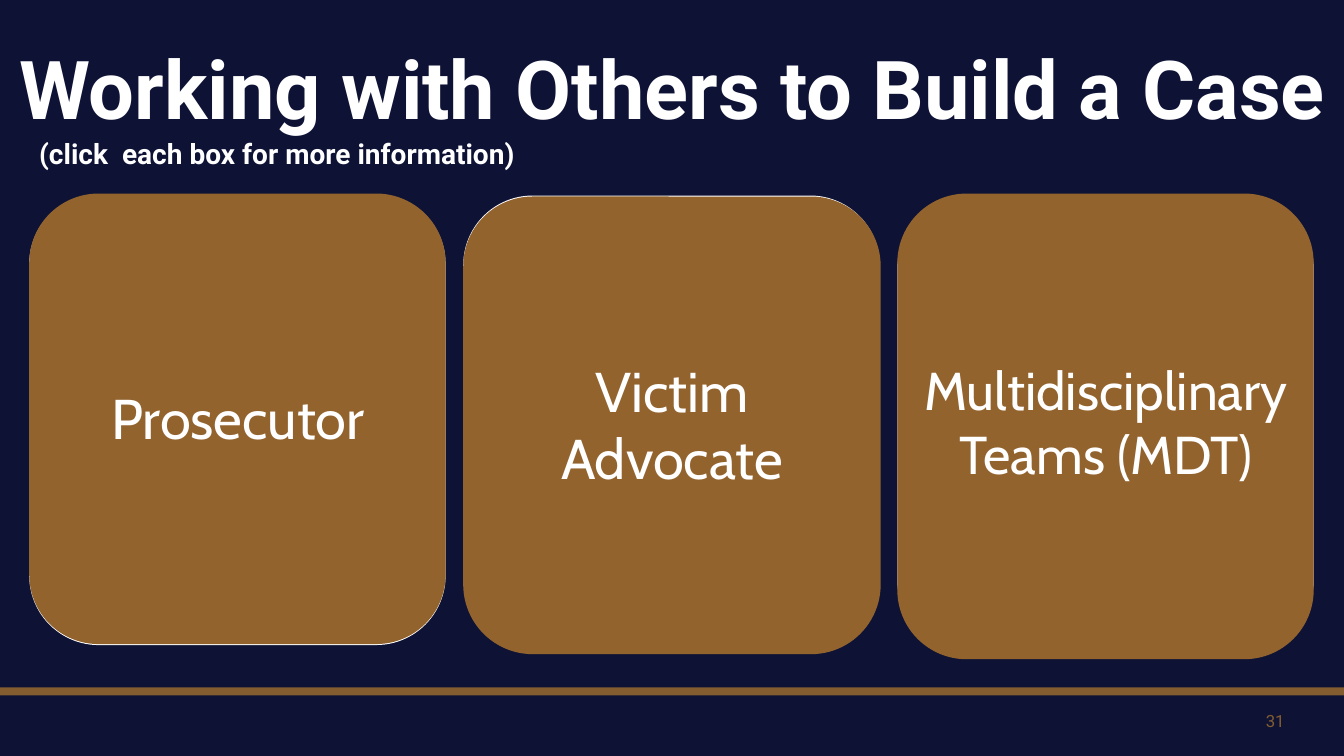
from pptx import Presentation
from pptx.dml.color import RGBColor
from pptx.enum.shapes import MSO_SHAPE as Shape
from pptx.enum.text import MSO_ANCHOR as Anchor, PP_ALIGN as Align
from pptx.util import Inches, Pt

COLORS = {"navy": "0E1336", "bronze": "93632E", "rule": "835C2F", "white": "FFFFFF"}

# Content: text, box, paragraph format, font format
HEADINGS = [
    ("Working with Others to Build a Case", (0, 0.44, 13.33, 0.73), Anchor.TOP,
     {"alignment": Align.CENTER, "line_spacing": 0.9},
     {"size": Pt(58), "bold": True}, "white"),
    ("(click  each box for more information)", (0.29, 1.31, 8.26, 0.43), Anchor.BOTTOM,
     {"alignment": Align.LEFT, "space_after": Pt(12)},
     {"size": Pt(20), "bold": True}, "white"),
    ("31", (9.84, 6.95, 3, 0.4), Anchor.MIDDLE,
     {"alignment": Align.RIGHT}, {"size": Pt(12)}, "rule"),
]

# Cards: label, size, label box, backing top, front top, front width, front height
CARDS = [
    ("Prosecutor", 40, (0.55, 3.76, 3.62, 0.77), 1.93, 1.92, 4.13, 4.47),
    ("Victim Advocate", 40, (4.85, 3.49, 3.63, 1.45), 1.94, 1.95, 4.14, 4.54),
    ("Multidisciplinary Teams (MDT)", 38, (8.91, 3.5, 4.12, 1.4), 1.98, 1.92, 4.13, 4.62),
]
CARD_LEFT, CARD_STEP = 0.29, 4.305
BACKING_WIDTH, BACKING_HEIGHT = 4.13, 4.47


def color(name):
    return RGBColor.from_string(COLORS[name])


def add_block(slide, kind, box, fill):
    block = slide.shapes.add_shape(kind, *map(Inches, box))
    block.shadow.inherit = False
    block.fill.solid()
    block.fill.fore_color.rgb = color(fill)
    block.line.fill.background()


def add_words(slide, words, box, anchor, layout, style, ink):
    frame = slide.shapes.add_textbox(*map(Inches, box)).text_frame
    frame.word_wrap = True
    frame.vertical_anchor = anchor
    paragraph = frame.paragraphs[0]
    run = paragraph.add_run()
    run.text = words
    for target, values in ((paragraph, layout), (run.font, style)):
        for name, value in values.items():
            setattr(target, name, value)
    run.font.color.rgb = color(ink)


def main():
    deck = Presentation()
    deck.slide_width, deck.slide_height = Inches(13.33), Inches(7.5)
    slide = deck.slides.add_slide(deck.slide_layouts[6])
    slide.background.fill.solid()
    slide.background.fill.fore_color.rgb = color("navy")

    # Footer rule
    add_block(slide, Shape.RECTANGLE, (0, 6.82, 13.33, 0.08), "rule")

    # Title, hint and page number
    for words, box, anchor, layout, style, ink in HEADINGS:
        add_words(slide, words, box, anchor, layout, {"name": "Roboto", **style}, ink)

    # Cards, each with a white backing that shows as a thin edge
    for index, (label, size, label_box, back_top, top, width, height) in enumerate(CARDS):
        left = CARD_LEFT + index * CARD_STEP
        add_block(slide, Shape.ROUNDED_RECTANGLE,
                  (left, back_top, BACKING_WIDTH, BACKING_HEIGHT), "white")
        add_block(slide, Shape.ROUNDED_RECTANGLE, (left, top, width, height), "bronze")
        add_words(slide, label, label_box, Anchor.TOP, {"alignment": Align.CENTER},
                  {"name": "Cabin", "size": Pt(size)}, "white")

    deck.save("out.pptx")


if __name__ == "__main__":
    main()
